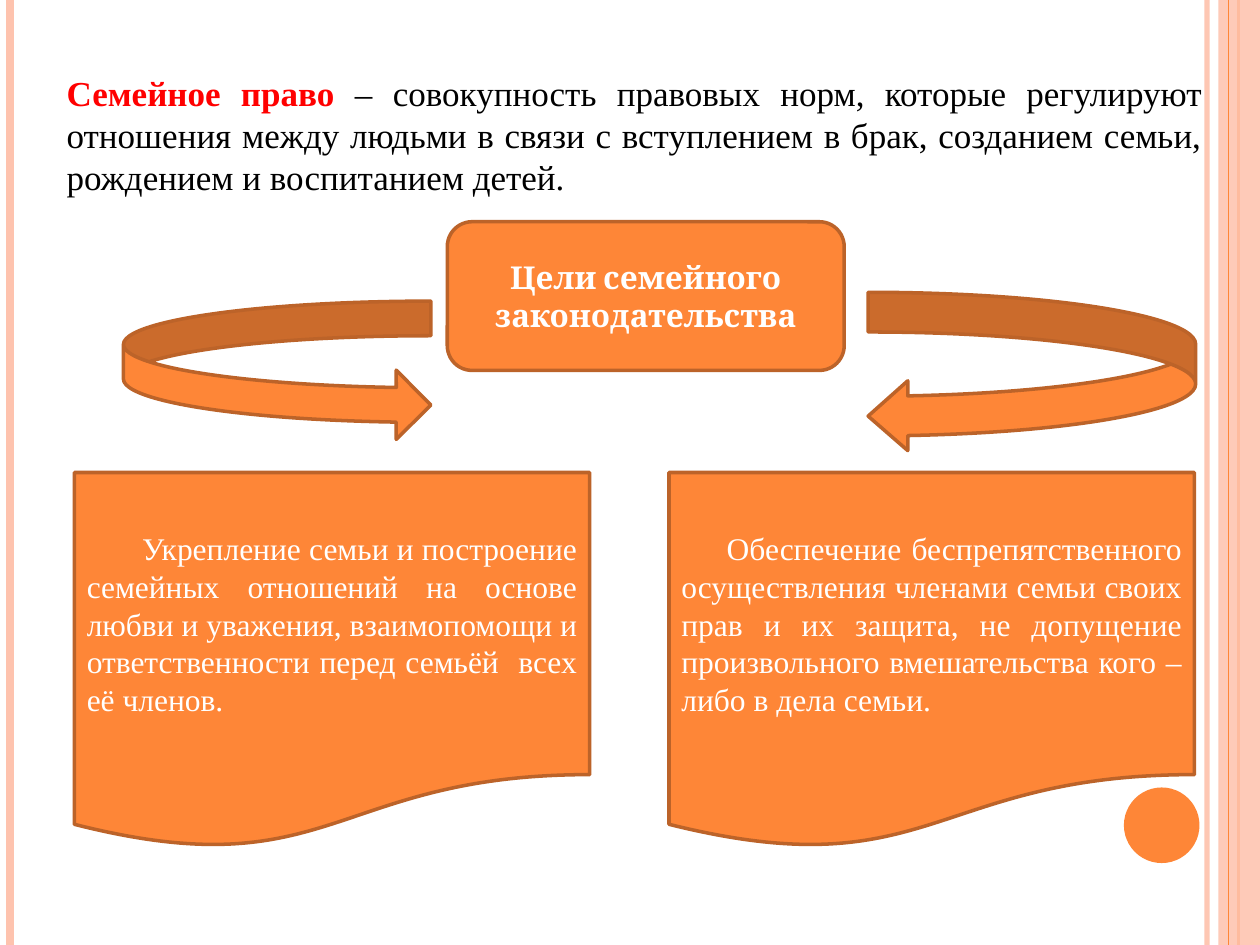
import pptx
import pptx.util
import pptx.dml.color
import pptx.enum.shapes
import pptx.enum.text
import pptx.oxml
import pptx.oxml.ns
from dataclasses import dataclass

Inches = pptx.util.Inches
Pt = pptx.util.Pt
RGB = pptx.dml.color.RGBColor.from_string
SHAPE = pptx.enum.shapes.MSO_SHAPE
ALIGN = pptx.enum.text.PP_ALIGN
ANCHOR = pptx.enum.text.MSO_ANCHOR
SIZING = pptx.enum.text.MSO_AUTO_SIZE


@dataclass(frozen=True)
class Theme:
    accent: str = "FE8637"
    outline: str = "BC6329"
    pale: str = "FEC3AE"
    term: str = "FF0000"
    ink: str = "000000"
    light: str = "FFFFFF"
    body_font: str = "Times New Roman"
    head_font: str = "Cambria"
    lead_size: int = 20
    box_size: int = 18
    border: float = 2


class SlideBuilder:
    def __init__(self, slide, theme):
        self.s = slide
        self.theme = theme

    def apply(self, target, values):
        for name, value in values.items():
            setattr(target, name, value)

    def fill(self, fmt, color):
        fmt.solid()
        fmt.fore_color.rgb = RGB(color)

    def set_alpha(self, sp, percent):
        clr = sp._element.spPr.find(".//" + pptx.oxml.ns.qn("a:srgbClr"))
        clr.append(clr.makeelement(pptx.oxml.ns.qn("a:alpha"), {"val": str(percent * 1000)}))

    def rule(self, x, color, width, alpha=100):
        c = self.s.shapes.add_connector(
            pptx.enum.shapes.MSO_CONNECTOR.STRAIGHT,
            Inches(x), Inches(0), Inches(x), Inches(7.5))
        c.line.width = Pt(width)
        self.fill(c.line.fill, color)
        self.set_alpha(c, alpha)
        props = c._element.spPr
        props.append(props.makeelement(pptx.oxml.ns.qn("a:effectLst"), {}))

    def shape(self, kind, box, color, outlined=True, adjustments=()):
        sp = self.s.shapes.add_shape(kind, *map(Inches, box))
        sp.shadow.inherit = False
        for i, value in enumerate(adjustments):
            sp.adjustments[i] = value
        self.fill(sp.fill, color)
        if outlined:
            sp.line.width = Pt(self.theme.border)
            self.fill(sp.line.fill, self.theme.outline)
        else:
            sp.line.fill.background()
        return sp

    def put_text(self, sp, runs, align, frame, indent=0):
        tf = sp.text_frame
        self.apply(tf, {"word_wrap": True, **frame})
        p = tf.paragraphs[0]
        p.alignment = align
        if indent:
            p._p.get_or_add_pPr().set("indent", str(Inches(indent)))
        for text, font, size, color, bold in runs:
            r = p.add_run()
            r.text = text
            r.font.color.rgb = RGB(color)
            self.apply(r.font, {"name": font, "size": Pt(size), "bold": bold})

    def text(self, box, runs):
        sp = self.s.shapes.add_textbox(*map(Inches, box))
        self.put_text(sp, runs, ALIGN.JUSTIFY, {"auto_size": SIZING.SHAPE_TO_FIT_TEXT})

    def panel(self, kind, box, text, font, align, bold=False, indent=0):
        t = self.theme
        sp = self.shape(kind, box, t.accent)
        self.put_text(sp, [(text, font, t.box_size, t.light, bold)], align,
                      {"vertical_anchor": ANCHOR.MIDDLE}, indent)


def main():
    prs = pptx.Presentation()
    prs.slide_width, prs.slide_height = Inches(10), Inches(7.5)
    t = Theme()
    b = SlideBuilder(prs.slides.add_slide(prs.slide_layouts[6]), t)

    b.rule(9.58, t.pale, 3, 93)
    b.rule(0.08, t.pale, 4.5)
    b.rule(9.83, t.accent, 1.5)
    band = b.shape(SHAPE.RECTANGLE, (9.67, 0, 0.33, 7.5), t.pale, outlined=False)
    b.set_alpha(band, 87)
    b.rule(9.75, t.accent, 0.75)
    b.shape(SHAPE.OVAL, (8.92, 6.25, 0.6, 0.6), t.accent, outlined=False)

    b.text((0.43, 0.52, 9.21, 1.11), [
        ("Семейное право ", t.body_font, t.lead_size, t.term, True),
        ("– совокупность правовых норм, которые регулируют отношения между людьми "
         "в связи с вступлением в брак, созданием семьи, рождением и воспитанием детей.",
         t.body_font, t.lead_size, t.ink, False)])

    b.panel(SHAPE.ROUNDED_RECTANGLE, (3.55, 1.76, 3.15, 1.18),
            "Цели семейного законодательства", t.head_font, ALIGN.CENTER, bold=True)
    b.shape(SHAPE.CURVED_RIGHT_ARROW, (0.98, 2.39, 2.44, 1.1), t.accent)
    b.shape(SHAPE.CURVED_LEFT_ARROW, (6.89, 2.32, 2.6, 1.26), t.accent,
            adjustments=(0.25, 0.44, 0.25))

    goals = [
        (0.59, 4.09, 0.44,
         "Укрепление семьи и построение семейных отношений на основе любви и уважения, "
         "взаимопомощи и ответственности перед семьёй  всех её членов."),
        (5.31, 4.17, 0.36,
         "Обеспечение беспрепятственного осуществления членами семьи своих прав и их "
         "защита, не допущение произвольного вмешательства кого – либо в дела семьи."),
    ]
    for left, width, indent, goal in goals:
        b.panel(SHAPE.FLOWCHART_DOCUMENT, (left, 3.75, width, 2.99), goal,
                t.body_font, ALIGN.JUSTIFY, indent=indent)

    prs.save("out.pptx")


if __name__ == "__main__":
    main()
